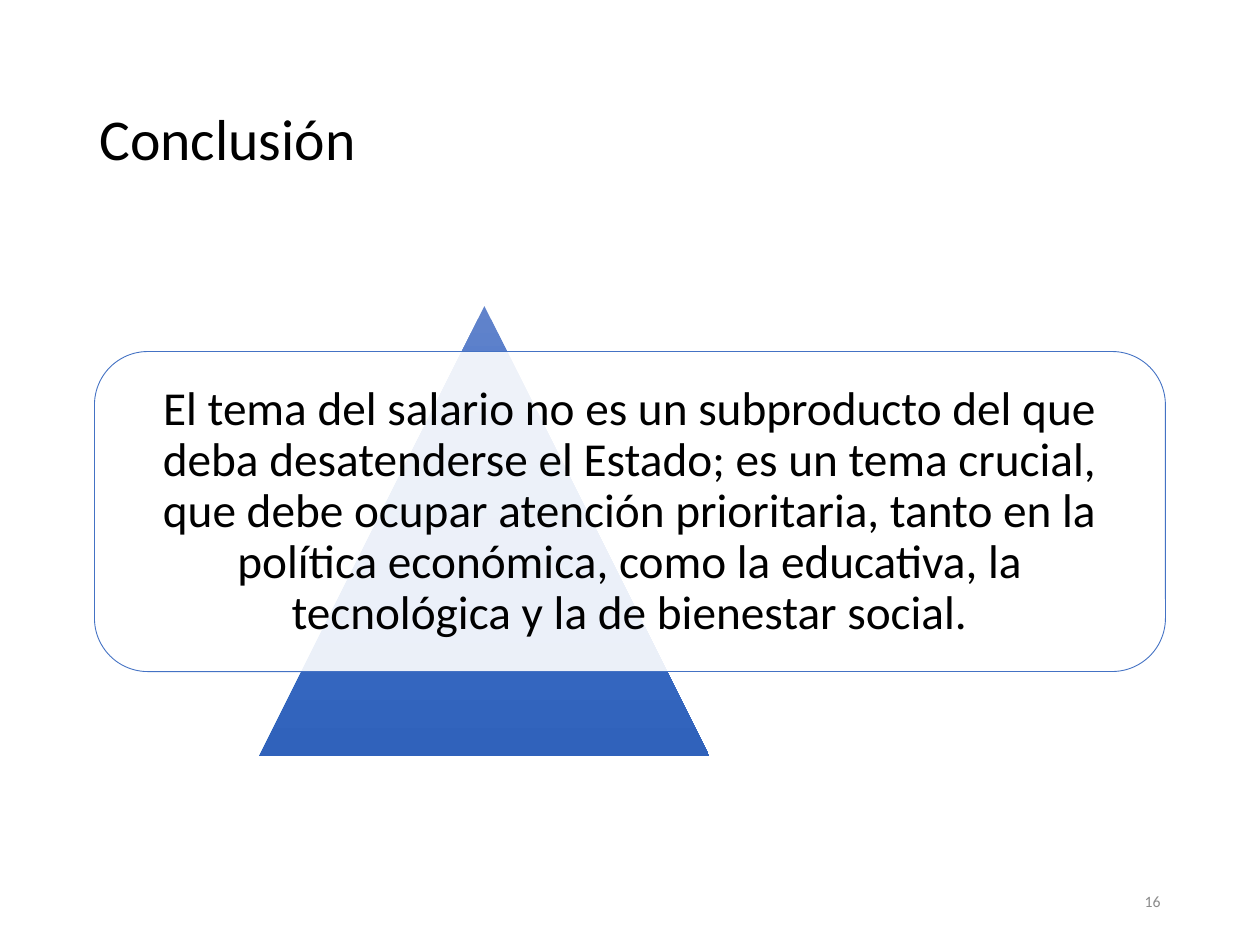
from copy import deepcopy

from lxml.etree import SubElement
from pptx import Presentation
from pptx.dml.color import RGBColor
from pptx.enum.shapes import MSO_SHAPE
from pptx.enum.text import MSO_ANCHOR, PP_ALIGN
from pptx.oxml.ns import qn
from pptx.util import Inches, Pt

BLACK = RGBColor(0x00, 0x00, 0x00)
WHITE = RGBColor(0xFF, 0xFF, 0xFF)
GRAY = RGBColor(0x8C, 0x8C, 0x8C)
BLUE = RGBColor(0x44, 0x72, 0xC4)
PYRAMID_STOPS = [
    (0, RGBColor(0x61, 0x83, 0xCB)),
    (0.5, RGBColor(0x3E, 0x70, 0xCA)),
    (1, RGBColor(0x30, 0x62, 0xBB)),
]
FONT = "Calibri"
CONCLUSION = (
    "El tema del salario no es un subproducto del que deba desatenderse el Estado; "
    "es un tema crucial, que debe ocupar atención prioritaria, tanto en la política "
    "económica, como la educativa, la tecnológica y la de bienestar social."
)

# text, (left, top, width, height), size, colour, alignment, line spacing, side and top insets
TEXTS = [
    ("Conclusión", (0.69, 0.4, 8.62, 1.45), 33, BLACK, PP_ALIGN.LEFT, 0.9, (0.1, 0.05)),
    (CONCLUSION, (0.87, 2.92, 8.25, 2.29), 27, BLACK, PP_ALIGN.CENTER, 0.9, (0.11, 0.11)),
    ("16", (7.06, 6.95, 2.25, 0.4), 9, GRAY, PP_ALIGN.RIGHT, 1.0, (0.1, 0.05)),
]
PYRAMID_BOX = (2.06, 2.43, 3.57, 3.57)
PANEL_BOX = (0.75, 2.79, 8.5, 2.54)


def add_shape(slide, preset, box):
    shape = slide.shapes.add_shape(preset, *map(Inches, box))
    shape.shadow.inherit = False
    return shape


def add_pyramid(slide):
    pyramid = add_shape(slide, MSO_SHAPE.ISOSCELES_TRIANGLE, PYRAMID_BOX)
    pyramid.line.fill.background()
    fill = pyramid.fill
    fill.gradient()
    fill.gradient_angle = 270  # counter-clockwise, so it runs downwards
    stop_list = pyramid.fill._xPr.find(qn("a:gradFill")).find(qn("a:gsLst"))
    stop_list.append(deepcopy(stop_list[-1]))
    for stop, (position, color) in zip(fill.gradient_stops, PYRAMID_STOPS):
        stop.position = position
        stop.color.rgb = color


def add_panel(slide):
    panel = add_shape(slide, MSO_SHAPE.ROUNDED_RECTANGLE, PANEL_BOX)
    panel.fill.solid()
    panel.fill.fore_color.rgb = WHITE
    fill_color = panel.fill._xPr.find(qn("a:solidFill"))[0]
    SubElement(fill_color, qn("a:alpha"), val="90000")
    panel.line.color.rgb = BLUE
    panel.line.width = Pt(0.5)


def add_text(slide, text, box, size, color, alignment, spacing, insets):
    frame = slide.shapes.add_textbox(*map(Inches, box)).text_frame
    frame.word_wrap = True
    frame.vertical_anchor = MSO_ANCHOR.MIDDLE
    frame.margin_left = frame.margin_right = Inches(insets[0])
    frame.margin_top = frame.margin_bottom = Inches(insets[1])
    paragraph = frame.paragraphs[0]
    paragraph.alignment = alignment
    paragraph.line_spacing = spacing
    run = paragraph.add_run()
    run.text = text
    run.font.name = FONT
    run.font.size = Pt(size)
    run.font.color.rgb = color


def main():
    deck = Presentation()
    deck.slide_width, deck.slide_height = Inches(10), Inches(7.5)
    slide = deck.slides.add_slide(deck.slide_layouts[6])
    add_pyramid(slide)
    add_panel(slide)
    for entry in TEXTS:
        add_text(slide, *entry)
    deck.save("out.pptx")


if __name__ == "__main__":
    main()
